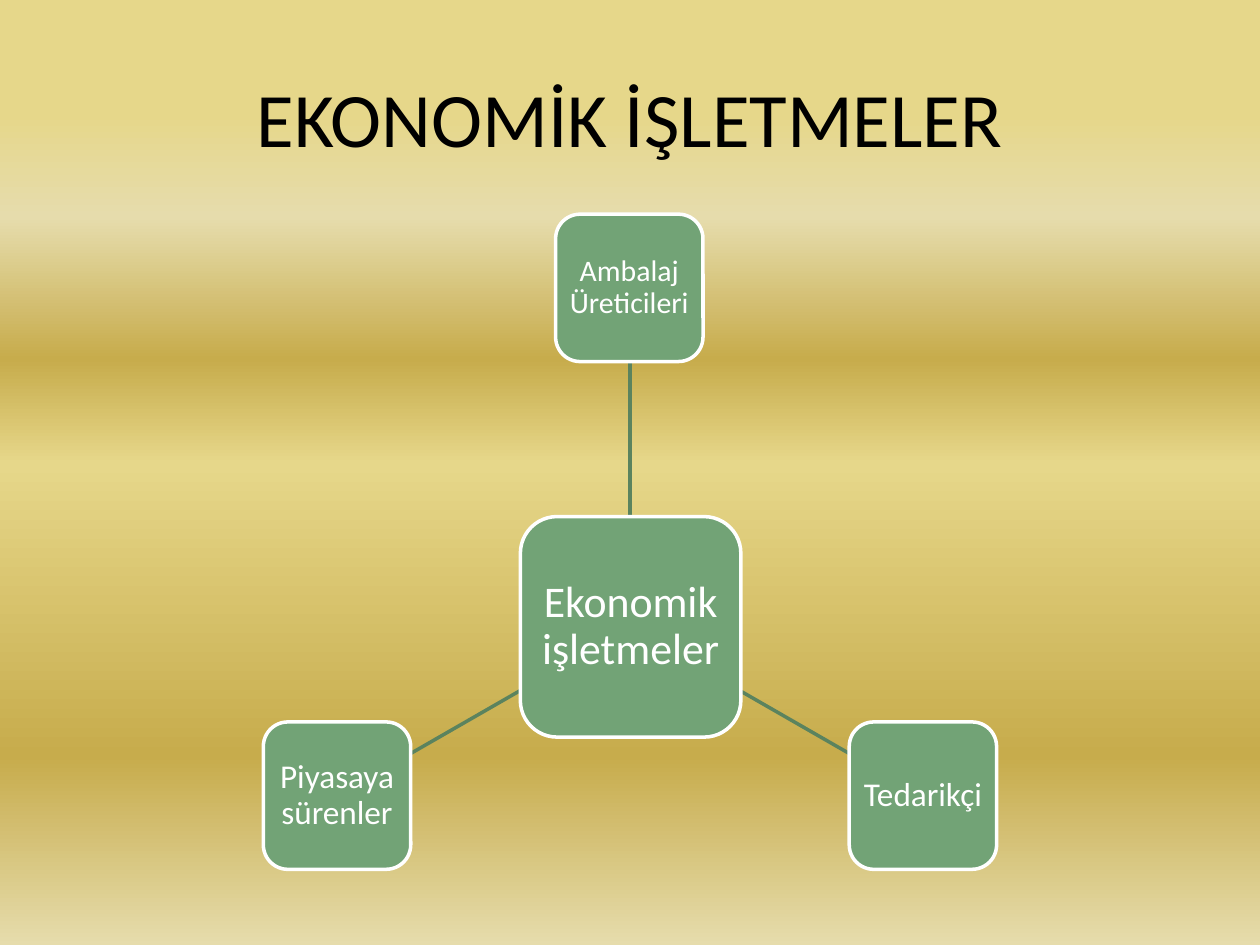
import lxml.etree
import pptx
import pptx.dml.color
import pptx.enum.shapes
import pptx.enum.text
import pptx.oxml.ns
import pptx.util
from pptx.util import Inches

qn = pptx.oxml.ns.qn


def color(hex_string):
    return pptx.dml.color.RGBColor.from_string(hex_string)


def add_text(frame, text, size, hex_string, inset):
    frame.word_wrap = True
    frame.vertical_anchor = pptx.enum.text.MSO_ANCHOR.MIDDLE
    frame.margin_left = frame.margin_right = Inches(inset)
    frame.margin_top = frame.margin_bottom = Inches(inset)
    paragraph = frame.paragraphs[0]
    paragraph.alignment = pptx.enum.text.PP_ALIGN.CENTER
    run = paragraph.add_run()
    run.text = text
    run.font.name = "Calibri"
    run.font.size = pptx.util.Pt(size)
    run.font.color.rgb = color(hex_string)
    return paragraph


presentation = pptx.Presentation()
presentation.slide_width = Inches(10)
presentation.slide_height = Inches(7.5)
slide = presentation.slides.add_slide(presentation.slide_layouts[5])

# Gold gradient background, running from top to bottom
fill = slide.background.fill
fill.gradient()
fill.gradient_angle = 270
stop_list = slide.background._cSld.find(".//" + qn("a:gsLst"))
for stop in list(stop_list):
    stop_list.remove(stop)
for percent, hex_string in [(12, "E6D78A"), (23, "E6DCAC"), (38, "C7AC4C"),
                            (49, "E6D78A"), (80, "C7AC4C"), (100, "E6DCAC")]:
    stop = lxml.etree.SubElement(stop_list, qn("a:gs"), pos=str(percent * 1000))
    lxml.etree.SubElement(stop, qn("a:srgbClr"), val=hex_string)

# Title
title = slide.shapes.title
title.left, title.top = Inches(0.5), Inches(0.3)
title.width, title.height = Inches(9), Inches(1.25)
add_text(title.text_frame, "EKONOMİK İŞLETMELER", 44, "000000", 0.1)

# Spokes from the centre box to the outer boxes
for x1, y1, x2, y2 in [(5, 4.1, 5, 2.87), (5.87, 5.48, 6.74, 5.98),
                       (4.13, 5.48, 3.26, 5.98)]:
    spoke = slide.shapes.add_connector(
        pptx.enum.shapes.MSO_CONNECTOR.STRAIGHT,
        Inches(x1), Inches(y1), Inches(x2), Inches(y2))
    spoke.line.color.rgb = color("5B835E")
    spoke.line.width = pptx.util.Pt(2)
    lxml.etree.SubElement(spoke._element.spPr, qn("a:effectLst"))

# Centre box and outer boxes: text, left, top, side, font size, inset
boxes = [
    ("Ekonomik işletmeler", 4.13, 4.1, 1.75, 25, 0.07),
    ("Ambalaj Üreticileri", 4.41, 1.7, 1.17, 17, 0.05),
    ("Tedarikçi", 6.74, 5.73, 1.17, 19, 0.05),
    ("Piyasaya sürenler", 2.09, 5.73, 1.17, 19, 0.05),
]
for text, left, top, side, size, inset in boxes:
    box = slide.shapes.add_shape(
        pptx.enum.shapes.MSO_SHAPE.ROUNDED_RECTANGLE,
        Inches(left), Inches(top), Inches(side), Inches(side))
    box.shadow.inherit = False
    box.fill.solid()
    box.fill.fore_color.rgb = color("72A376")
    box.line.color.rgb = color("FFFFFF")
    box.line.width = pptx.util.Pt(2)
    paragraph = add_text(box.text_frame, text, size, "FFFFFF", inset)
    paragraph.line_spacing = 0.9

presentation.save("out.pptx")
